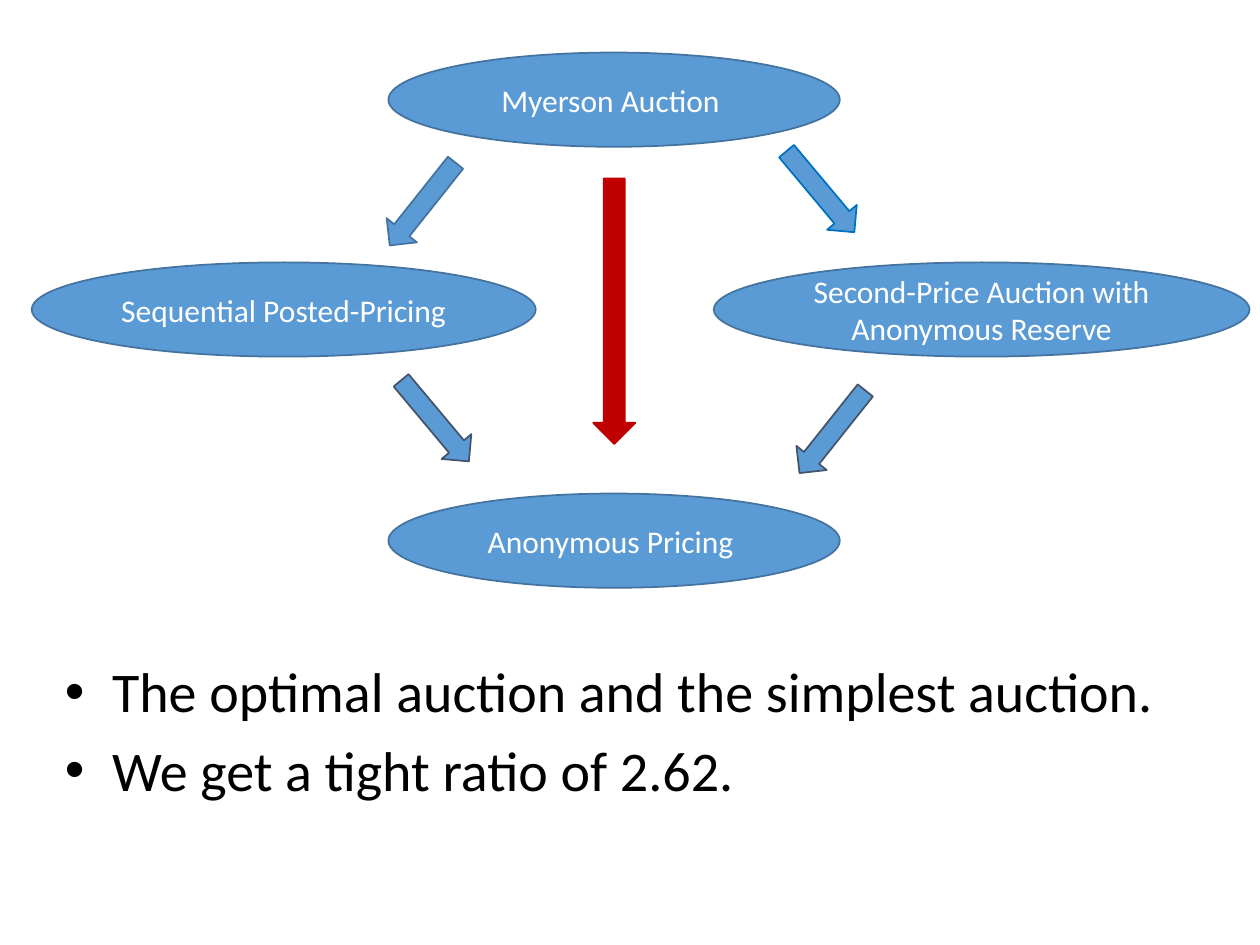
from lxml import etree
from pptx import Presentation
from pptx import util as u
from pptx.dml.color import RGBColor
from pptx.enum import shapes, text
from pptx.oxml.ns import qn

BLUE, RED, WHITE, BLACK = "5B9BD5", "C00000", "FFFFFF", "000000"
EDGE, SLATE, BRIGHT = "43739E", "44546A", "0070C0"


def add_figure(page, kind, place, fill, line):
    """Add a flat preset shape; place is left, top, width, height in cm."""
    figure = page.shapes.add_shape(kind, *[u.Cm(length) for length in place])
    figure.shadow.inherit = False
    figure.fill.solid()
    figure.fill.fore_color.rgb = RGBColor.from_string(fill)
    figure.line.color.rgb = RGBColor.from_string(line)
    figure.line.width = u.Pt(1)
    return figure


def write(para, wording, size, colour):
    span = para.add_run()
    span.text = wording
    for name, value in {"name": "Calibri", "size": u.Pt(size)}.items():
        setattr(span.font, name, value)
    span.font.color.rgb = RGBColor.from_string(colour)


deck = Presentation()
deck.slide_width, deck.slide_height = u.Cm(25.4), u.Cm(19.05)
page = deck.slides.add_slide(deck.slide_layouts[6])

# Mechanisms: wording, left, top, width
mechanisms = [
    ("Myerson Auction ", 7.83, 1.06, 9.1),
    ("Anonymous Pricing ", 7.83, 9.95, 9.1),
    ("Sequential Posted-Pricing", 0.64, 5.29, 10.16),
    ("Second-Price Auction with Anonymous Reserve", 14.39, 5.29, 10.8),
]
for wording, left, top, width in mechanisms:
    oval = add_figure(page, shapes.MSO_SHAPE.OVAL, (left, top, width, 1.9), BLUE, EDGE)
    oval.text_frame.word_wrap = True
    oval.text_frame.vertical_anchor = text.MSO_ANCHOR.MIDDLE
    para = oval.text_frame.paragraphs[0]
    para.alignment = text.PP_ALIGN.CENTER
    write(para, wording, 18, WHITE)

# Arrows: left, top, width, height, rotation, fill, line
arrows = [
    (11.96, 3.6, 0.85, 5.35, 0, RED, RED),
    (8.13, 3.05, 0.78, 2.13, 38.5, BLUE, EDGE),
    (16.39, 7.64, 0.78, 2.13, 38.5, BLUE, SLATE),
    (8.38, 7.42, 0.78, 2.13, 320.1, BLUE, SLATE),
    (16.15, 2.8, 0.78, 2.13, 320.1, BLUE, BRIGHT),
]
for *place, rotation, fill, line in arrows:
    arrow = add_figure(page, shapes.MSO_SHAPE.DOWN_ARROW, place, fill, line)
    arrow.rotation = rotation

# Findings
box = page.shapes.add_textbox(u.Cm(1.06), u.Cm(13.12), u.Cm(23.5), u.Cm(3.28))
frame = box.text_frame
frame.word_wrap = True
frame.auto_size = text.MSO_AUTO_SIZE.SHAPE_TO_FIT_TEXT
findings = ["The optimal auction and the simplest auction.", "We get a tight ratio of 2.62."]
for index, finding in enumerate(findings):
    para = frame.add_paragraph() if index else frame.paragraphs[0]
    para.space_before = u.Pt(6.4)
    write(para, finding, 32, BLACK)
    properties = para._p.get_or_add_pPr()
    properties.set("marL", str(u.Cm(0.95)))
    properties.set("indent", str(-u.Cm(0.95)))
    etree.SubElement(properties, qn("a:buFont"), typeface="Arial")
    etree.SubElement(properties, qn("a:buChar"), char="•")

deck.save("out.pptx")
